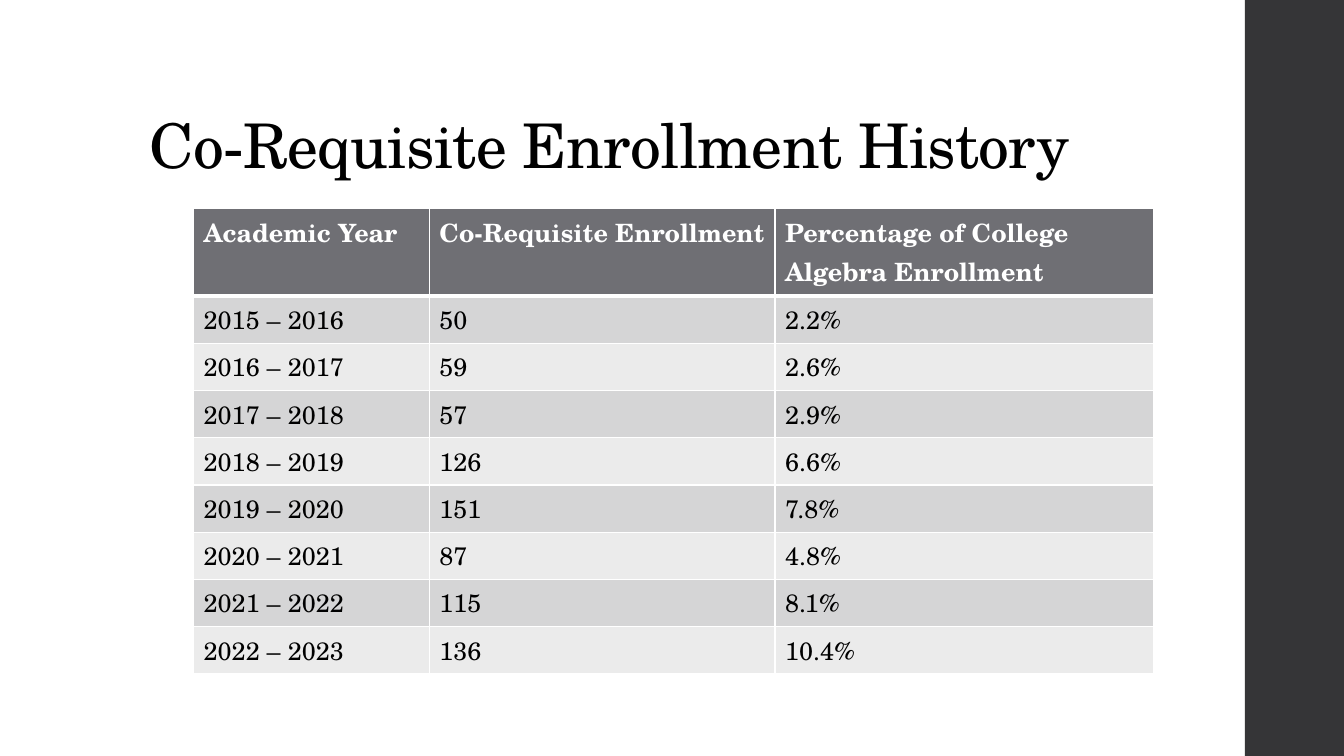
"""Build a slide with a table of co-requisite enrollment by academic year."""
from lxml import etree
from pptx import Presentation
from pptx.dml.color import RGBColor
from pptx.enum import shapes, text
from pptx.oxml import ns
from pptx.util import Cm, Pt

TITLE = "Co-Requisite Enrollment History"
HEADER = ("Academic Year", "Co-Requisite Enrollment", "Percentage of College Algebra Enrollment")
FIRST_YEAR = 2015
ENROLLMENT = [
    ("50", "2.2%"),
    ("59", "2.6%"),
    ("57", "2.9%"),
    ("126", "6.6%"),
    ("151", "7.8%"),
    ("87", "4.8%"),
    ("115", "8.1%"),
    ("136", "10.4%"),
]
FONT = "TeX Gyre Schola"
SLIDE_WIDTH, SLIDE_HEIGHT = 33.87, 19.05
SIDEBAR_WIDTH = 2.5
COLUMN_WIDTHS = (5.94, 8.71, 9.53)
HEADER_HEIGHT, ROW_HEIGHT = 2.18, 1.19
HEADER_FILL, BAND_FILLS = "6F6F74", ("D5D5D6", "EBEBEB")


def color(value):
    return RGBColor.from_string(value)


def paint(shape, value):
    shape.fill.solid()
    shape.fill.fore_color.rgb = color(value)


def write(frame, content, size=18, ink="000000", bold=False, tracking=None, line_spacing=None):
    para = frame.paragraphs[0]
    para.alignment = text.PP_ALIGN.LEFT
    if line_spacing:
        para.line_spacing = line_spacing
    span = para.add_run()
    span.text = content
    span.font.name, span.font.size, span.font.bold = FONT, Pt(size), bold
    span.font.color.rgb = color(ink)
    if tracking:
        span._r.get_or_add_rPr().set("spc", str(int(tracking * 100)))


def add_borders(cell, **widths):
    properties = cell._tc.get_or_add_tcPr()
    for side in "LRTB":
        line = etree.SubElement(properties, ns.qn(f"a:ln{side}"), w=str(Pt(widths.get(side, 1))))
        fill = etree.SubElement(line, ns.qn("a:solidFill"))
        etree.SubElement(fill, ns.qn("a:srgbClr"), val="FFFFFF")


def add_sidebar(page):
    sidebar = page.shapes.add_shape(
        shapes.MSO_SHAPE.RECTANGLE, Cm(SLIDE_WIDTH - SIDEBAR_WIDTH), 0, Cm(SIDEBAR_WIDTH), Cm(SLIDE_HEIGHT))
    sidebar.shadow.inherit = False
    paint(sidebar, "353537")
    sidebar.line.fill.background()


def add_title(page):
    title = page.shapes.title
    title.left, title.top, title.width, title.height = Cm(3.51), Cm(1.02), Cm(26.92), Cm(3.68)
    title.text_frame.vertical_anchor = text.MSO_ANCHOR.BOTTOM
    write(title.text_frame, TITLE, size=44, tracking=-0.5, line_spacing=0.9)


def add_enrollment_table(page):
    years = range(FIRST_YEAR, FIRST_YEAR + len(ENROLLMENT))
    rows = [HEADER] + [(f"{year} – {year + 1}", *values) for year, values in zip(years, ENROLLMENT)]
    heights = [HEADER_HEIGHT] + [ROW_HEIGHT] * len(ENROLLMENT)
    table = page.shapes.add_table(
        len(rows), len(HEADER), Cm(4.88), Cm(5.24), Cm(sum(COLUMN_WIDTHS)), Cm(sum(heights))).table
    for column, width in zip(table.columns, COLUMN_WIDTHS):
        column.width = Cm(width)
    for index, (values, height) in enumerate(zip(rows, heights)):
        table.rows[index].height = Cm(height)
        heading = index == 0
        for cell, value in zip(table.rows[index].cells, values):
            add_borders(cell, T=3 if index == 1 else 1, B=3 if heading else 1)
            paint(cell, HEADER_FILL if heading else BAND_FILLS[(index - 1) % 2])
            write(cell.text_frame, value, ink="FFFFFF" if heading else "000000", bold=heading)


def main():
    deck = Presentation()
    deck.slide_width, deck.slide_height = Cm(SLIDE_WIDTH), Cm(SLIDE_HEIGHT)
    page = deck.slides.add_slide(deck.slide_layouts.get_by_name("Title Only"))
    add_sidebar(page)
    add_title(page)
    add_enrollment_table(page)
    deck.save("out.pptx")


if __name__ == "__main__":
    main()
